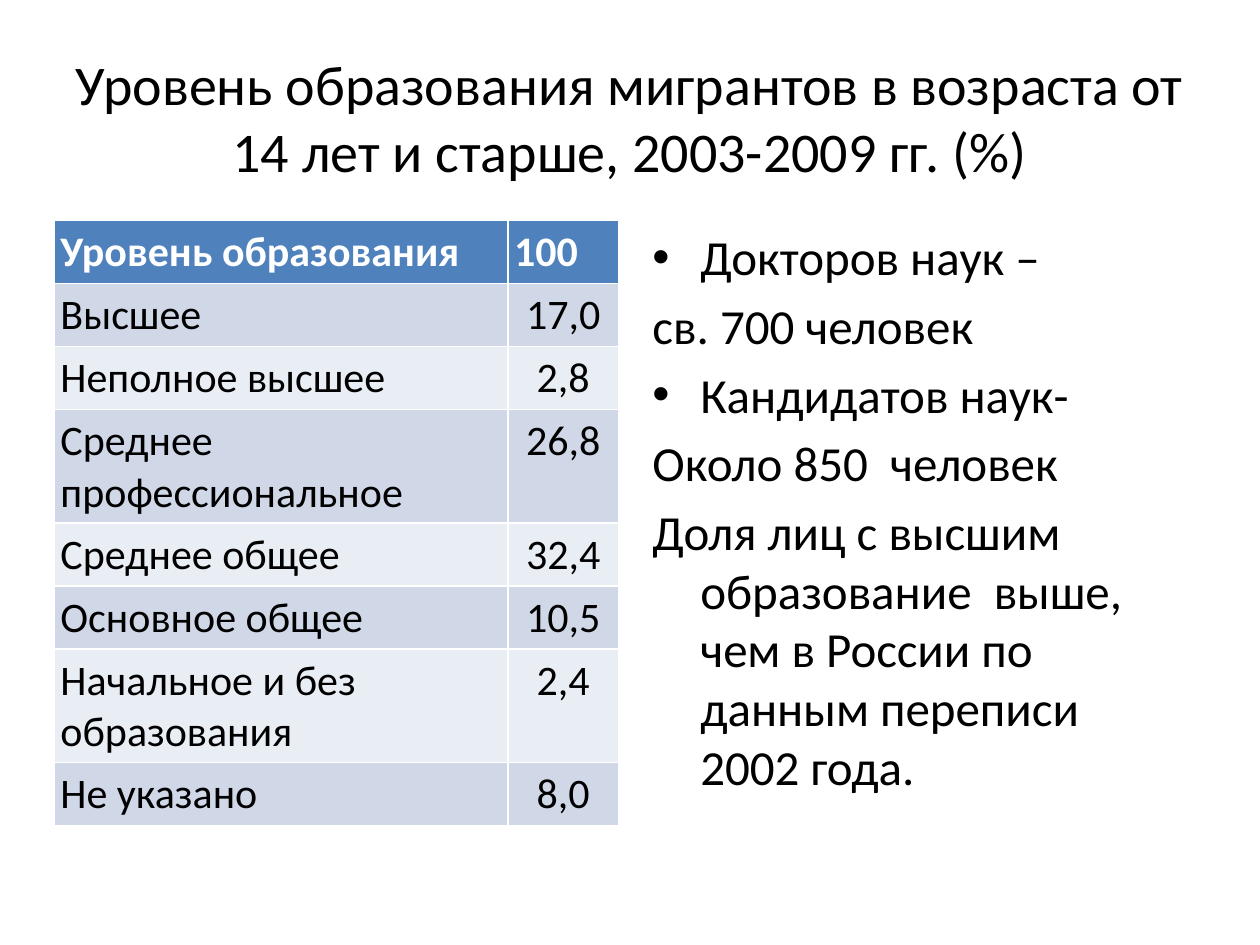
from lxml import etree
from pptx import Presentation
from pptx import util as u
from pptx.dml.color import RGBColor
from pptx.enum import text
from pptx.oxml.ns import qn

TITLE = "Уровень образования мигрантов в возраста от 14 лет и старше, 2003-2009 гг. (%)"
ROWS = [
    ("Уровень образования", "100"),
    ("Высшее", "17,0"),
    ("Неполное высшее", "2,8"),
    ("Среднее профессиональное", "26,8"),
    ("Среднее общее", "32,4"),
    ("Основное общее", "10,5"),
    ("Начальное и без образования", "2,4"),
    ("Не указано", "8,0"),
]
NOTES = [
    ("•", "Докторов наук –"),
    ("", "св. 700 человек"),
    ("•", "Кандидатов наук-"),
    ("", "Около 850  человек"),
    ("", "Доля лиц с высшим образование  выше, чем в России по данным переписи 2002 года."),
]
COLUMN_WIDTHS = (3.6, 0.88)
ROW_HEIGHT = 0.41
CELL_MARGIN = 0.05
HEADER_FILL, BAND_FILLS = "4F81BD", ("E9EDF4", "D0D8E8")
INDENT = 0.38
NOTE_SIZE = 28
CONTENT_TOP = 1.75


def color(value):
    return RGBColor.from_string(value)


def set_all(target, values):
    for name, value in values.items():
        setattr(target, name, value)


def write(paragraph, content, size, ink="000000", bold=False, align=text.PP_ALIGN.LEFT):
    paragraph.alignment = align
    run = paragraph.add_run()
    run.text = content
    set_all(run.font, {"name": "Calibri", "size": u.Pt(size), "bold": bold})
    run.font.color.rgb = color(ink)


def add_text_frame(slide, *box):
    frame = slide.shapes.add_textbox(*map(u.Inches, box)).text_frame
    frame.word_wrap = True
    return frame


def add_title(slide):
    frame = add_text_frame(slide, 0.5, 0.3, 9, 1.25)
    frame.vertical_anchor = text.MSO_ANCHOR.MIDDLE
    write(frame.paragraphs[0], TITLE, 32, align=text.PP_ALIGN.CENTER)


def add_education_table(slide):
    box = (0.43, CONTENT_TOP, sum(COLUMN_WIDTHS), ROW_HEIGHT * len(ROWS))
    table = slide.shapes.add_table(
        len(ROWS), len(COLUMN_WIDTHS), *map(u.Inches, box)).table
    for column, width in zip(table.columns, COLUMN_WIDTHS):
        column.width = u.Inches(width)
    margins = {f"margin_{side}": u.Inches(CELL_MARGIN)
               for side in ("left", "top", "right", "bottom")}
    for r, values in enumerate(ROWS):
        header = r == 0
        for c, value in enumerate(values):
            cell = table.cell(r, c)
            set_all(cell, margins)
            cell.fill.solid()
            cell.fill.fore_color.rgb = color(HEADER_FILL if header else BAND_FILLS[r % 2])
            centred = c > 0 and not header
            write(cell.text_frame.paragraphs[0], value, 24,
                  "FFFFFF" if header else "000000", header,
                  text.PP_ALIGN.CENTER if centred else text.PP_ALIGN.LEFT)


def add_notes_column(slide):
    frame = add_text_frame(slide, 5.08, CONTENT_TOP, 4.42, 4.95)
    for i, (bullet, content) in enumerate(NOTES):
        paragraph = frame.add_paragraph() if i else frame.paragraphs[0]
        write(paragraph, content, NOTE_SIZE)
        paragraph.space_before = u.Pt(NOTE_SIZE * 0.2)
        properties = paragraph._p.get_or_add_pPr()
        properties.set("marL", str(u.Inches(INDENT)))
        properties.set("indent", str(u.Inches(-INDENT)))
        if bullet:
            etree.SubElement(properties, qn("a:buFont")).set("typeface", "Arial")
            etree.SubElement(properties, qn("a:buChar")).set("char", bullet)
        else:
            etree.SubElement(properties, qn("a:buNone"))


def main():
    presentation = Presentation()
    set_all(presentation, {"slide_width": u.Inches(10), "slide_height": u.Inches(7.5)})
    slide = presentation.slides.add_slide(presentation.slide_layouts[6])
    add_title(slide)
    add_education_table(slide)
    add_notes_column(slide)
    presentation.save("out.pptx")


if __name__ == "__main__":
    main()
